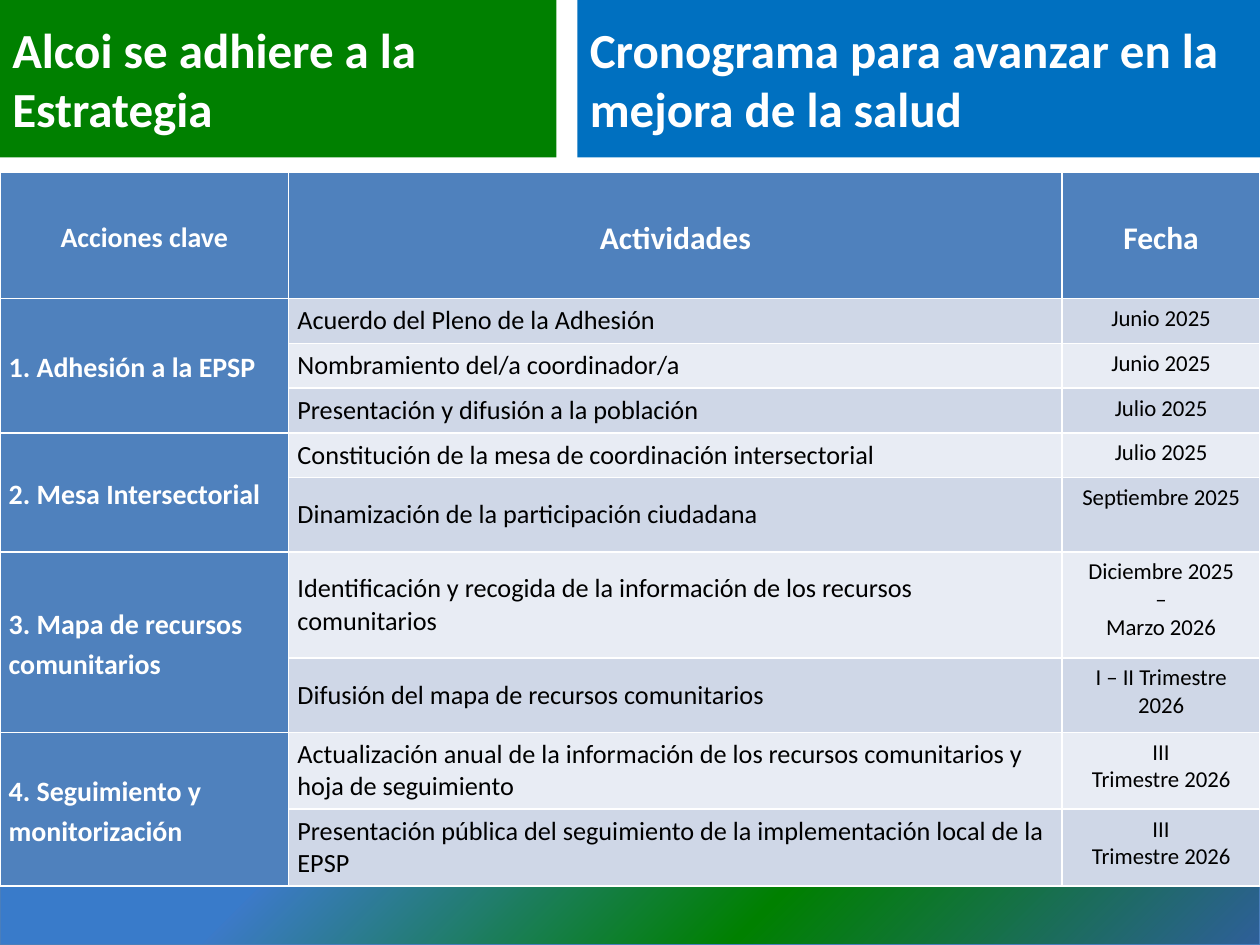
from dataclasses import dataclass

from lxml import etree
from pptx import Presentation
from pptx.dml.color import RGBColor
from pptx.enum.shapes import MSO_SHAPE
from pptx.enum.text import MSO_ANCHOR, PP_ALIGN
from pptx.oxml import parse_xml
from pptx.util import Pt

RECT = MSO_SHAPE.RECTANGLE
MIDDLE, TOP = MSO_ANCHOR.MIDDLE, MSO_ANCHOR.TOP
LEFT, CENTER = PP_ALIGN.LEFT, PP_ALIGN.CENTER
NS = "http://schemas.openxmlformats.org/drawingml/2006/main"


@dataclass(frozen=True)
class Theme:
    font: str = "Calibri"
    white: str = "FFFFFF"
    black: str = "000000"
    green: str = "008000"
    blue: str = "0070C0"
    head: str = "4F81BD"
    bands: tuple = ("CFD7E7", "E8ECF4")
    edge: str = "4A7EBB"
    fade: tuple = ((0, "397BCA"), (20, "3C7AC7"), (60, "008000"), (100, "2E5F99"))
    title: float = 28
    label: float = 18
    key: float = 16
    body: float = 15
    date: float = 13


T = Theme()

WIDTHS = (165, 442, 113)
HEIGHTS = (72, 25.5, 25.5, 25.5, 25.5, 42.5, 60.5, 42.5, 43.8, 43.8)
HEADS = (("Acciones clave", T.key), ("Actividades", T.label), ("Fecha", T.label))
PLAN = (
    ("1. Adhesión a la EPSP", (
        ("Acuerdo del Pleno de la Adhesión", "Junio 2025"),
        ("Nombramiento del/a coordinador/a", "Junio 2025"),
        ("Presentación y difusión a la población", "Julio 2025"))),
    ("2. Mesa Intersectorial", (
        ("Constitución de la mesa de coordinación intersectorial", "Julio 2025"),
        ("Dinamización de la participación ciudadana", "Septiembre 2025"))),
    ("3. Mapa de recursos comunitarios", (
        ("Identificación y recogida de la información de los recursos comunitarios",
         "Diciembre 2025\n–\nMarzo 2026"),
        ("Difusión del mapa de recursos comunitarios", "I – II Trimestre\n2026"))),
    ("4. Seguimiento y monitorización", (
        ("Actualización anual de la información de los recursos comunitarios "
         "y hoja de seguimiento", "III\nTrimestre 2026"),
        ("Presentación pública del seguimiento de la implementación local de la EPSP",
         "III\nTrimestre 2026"))),
)


def rgb(code):
    return RGBColor.from_string(code)


def write(frame, text, size, color, bold=False, align=LEFT, space=1.0):
    frame.text = text
    for para in frame.paragraphs:
        para.alignment = align
        para.line_spacing = space
        for run in para.runs:
            font = run.font
            font.name, font.size, font.bold = T.font, Pt(size), bold
            font.color.rgb = rgb(color)


def add_box(slide, left, top, width, height):
    box = slide.shapes.add_shape(RECT, Pt(left), Pt(top), Pt(width), Pt(height))
    box.shadow.inherit = False
    return box


def add_title(slide, left, width, color, text):
    box = add_box(slide, left, 0, width, 90)
    box.fill.solid()
    box.fill.fore_color.rgb = rgb(color)
    box.line.fill.background()
    frame = box.text_frame
    frame.word_wrap = True
    frame.vertical_anchor = MIDDLE
    write(frame, text, T.title, T.white, bold=True)


def add_strip(slide):
    box = add_box(slide, 0, 504, 720, 36)
    box.line.color.rgb = rgb(T.edge)
    box.line.width = Pt(0.75)
    # Four-stop diagonal gradient
    stops = "".join(f'<a:gs pos="{pos * 1000}"><a:srgbClr val="{code}"/></a:gs>'
                    for pos, code in T.fade)
    props = box.fill._xPr
    props.find(f"{{{NS}}}prstGeom").addnext(parse_xml(
        f'<a:gradFill xmlns:a="{NS}" rotWithShape="1"><a:gsLst>{stops}</a:gsLst>'
        '<a:lin ang="2700000" scaled="0"/></a:gradFill>'))
    # Soft shadow straight below
    glow = etree.SubElement(props.find(f"{{{NS}}}effectLst"), f"{{{NS}}}outerShdw",
                            blurRad=str(Pt(3.1)), dist=str(Pt(1.8)), dir="5400000")
    shade = etree.SubElement(glow, f"{{{NS}}}srgbClr", val=T.black)
    etree.SubElement(shade, f"{{{NS}}}alpha", val="34000")


def set_cell(cell, text, fill, size, color, anchor=MIDDLE, **style):
    cell.margin_left = cell.margin_right = Pt(5)
    cell.margin_top = cell.margin_bottom = Pt(3.6)
    cell.vertical_anchor = anchor
    write(cell.text_frame, text, size, color, **style)
    cell.fill.solid()
    cell.fill.fore_color.rgb = rgb(fill)


def add_edges(cell):
    props = cell._tc.get_or_add_tcPr()
    for spot, side in enumerate(("lnL", "lnR", "lnT", "lnB")):
        props.insert(spot, parse_xml(
            f'<a:{side} xmlns:a="{NS}" w="{Pt(0.96)}"><a:solidFill>'
            f'<a:srgbClr val="{T.white}"/></a:solidFill></a:{side}>'))


def add_plan(slide):
    grid = slide.shapes.add_table(len(HEIGHTS), len(WIDTHS), Pt(0), Pt(98.6),
                                  Pt(sum(WIDTHS)), Pt(sum(HEIGHTS))).table
    grid.first_row = grid.horz_banding = False
    for col, width in zip(grid.columns, WIDTHS):
        col.width = Pt(width)
    for row, height in zip(grid.rows, HEIGHTS):
        row.height = Pt(height)

    # Header row
    for col, (text, size) in enumerate(HEADS):
        set_cell(grid.cell(0, col), text, T.head, size, T.white,
                 bold=True, align=CENTER, space=1.15)

    # One merged key cell for each group of tasks
    row = 1
    for key, tasks in PLAN:
        first = grid.cell(row, 0)
        first.merge(grid.cell(row + len(tasks) - 1, 0))
        set_cell(first, key, T.head, T.key, T.white, bold=True, space=1.15)
        for task, date in tasks:
            band = T.bands[(row - 1) % 2]
            set_cell(grid.cell(row, 1), task, band, T.body, T.black)
            set_cell(grid.cell(row, 2), date, band, T.date, T.black,
                     anchor=TOP, align=CENTER)
            row += 1

    for cell in grid.iter_cells():
        add_edges(cell)


def main():
    deck = Presentation()
    deck.slide_width, deck.slide_height = Pt(720), Pt(540)
    slide = deck.slides.add_slide(deck.slide_layouts[6])
    add_strip(slide)
    add_plan(slide)
    add_title(slide, 0, 318, T.green, "Alcoi se adhiere a la Estrategia")
    add_title(slide, 330, 390, T.blue, "Cronograma para avanzar en la mejora de la salud")
    deck.save("out.pptx")


if __name__ == "__main__":
    main()
